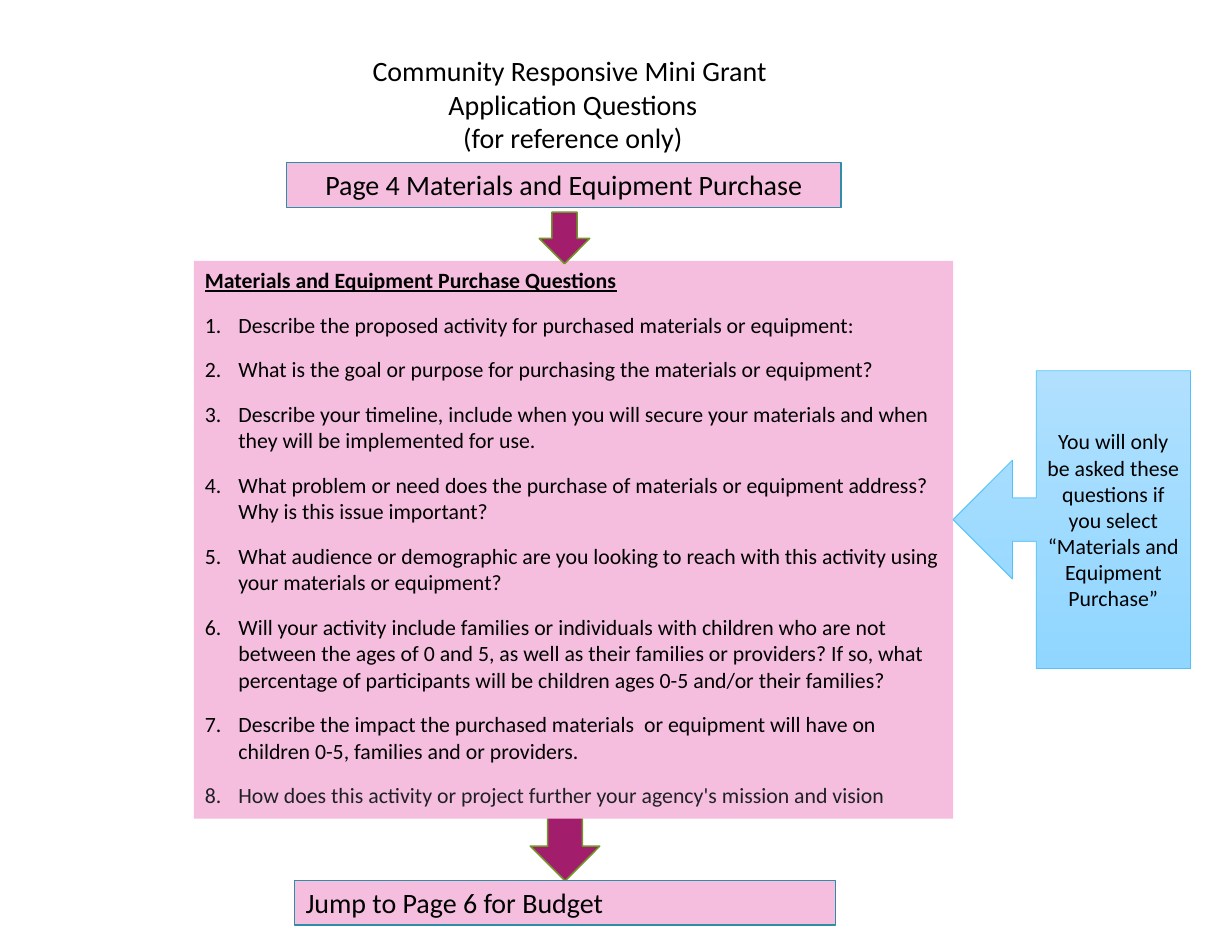
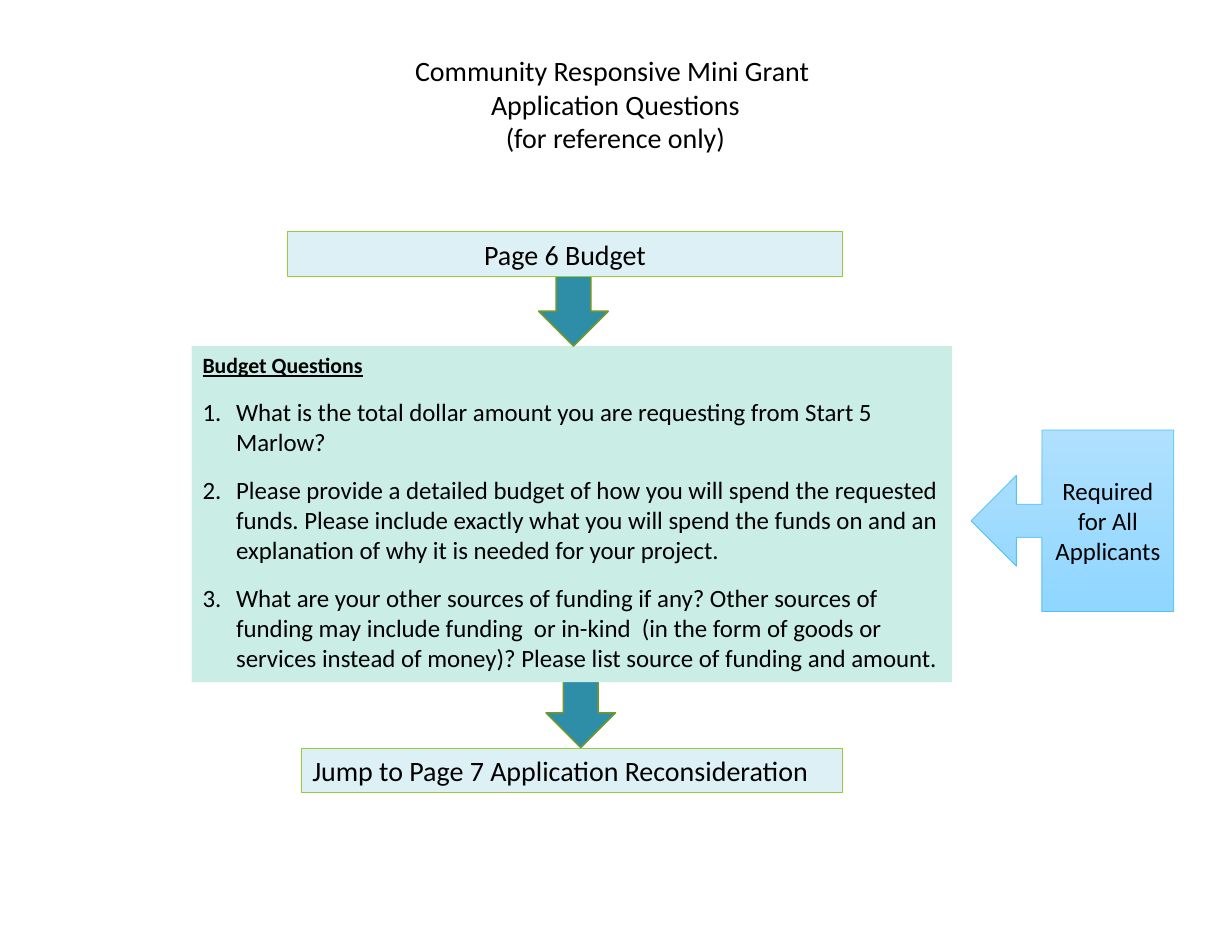
import lxml.etree
import pptx
import pptx.dml.color
import pptx.enum.shapes
import pptx.enum.text
import pptx.oxml.ns
import pptx.util

Inches = pptx.util.Inches
Pt = pptx.util.Pt
RGBColor = pptx.dml.color.RGBColor
SHAPE = pptx.enum.shapes.MSO_SHAPE
ALIGN = pptx.enum.text.PP_ALIGN
ANCHOR = pptx.enum.text.MSO_ANCHOR
AUTO_SIZE = pptx.enum.text.MSO_AUTO_SIZE

FONT = "Calibri"
BLACK = RGBColor(0x00, 0x00, 0x00)
CHARCOAL = RGBColor(0x20, 0x21, 0x24)
PINK = RGBColor(0xF5, 0xBE, 0xDF)
MAGENTA = RGBColor(0xA3, 0x1D, 0x6D)
TEAL = RGBColor(0x2E, 0x8E, 0xA8)
MINT = RGBColor(0xCA, 0xEE, 0xE5)
ICE = RGBColor(0xDC, 0xF0, 0xF5)
LIME = RGBColor(0x99, 0xCB, 0x38)
OLIVE = RGBColor(0x71, 0x96, 0x29)
SKY_TOP = RGBColor(0xB0, 0xE0, 0xFE)
SKY_BOTTOM = RGBColor(0x90, 0xD6, 0xFF)
SKY_LINE = RGBColor(0x51, 0xC3, 0xF9)

TITLE_LINES = ["Community Responsive Mini Grant ", "Application Questions", "(for reference only)"]
CALLOUT_ADJUSTMENTS = [0.182, 0.25, 0.25, 0.65]

MATERIALS_QUESTIONS = [
    "Describe the proposed activity for purchased materials or equipment:",
    "What is the goal or purpose for purchasing the materials or equipment?",
    "Describe your timeline, include when you will secure your materials and when "
    "they will be implemented for use.",
    "What problem or need does the purchase of materials or equipment address? "
    "Why is this issue important?",
    "What audience or demographic are you looking to reach with this activity using "
    "your materials or equipment?",
    "Will your activity include families or individuals with children who are not "
    "between the ages of 0 and 5, as well as their families or providers? If so, what "
    "percentage of participants will be children ages 0-5 and/or their families?",
    "Describe the impact the purchased materials  or equipment will have on "
    "children 0-5, families and or providers.",
    "How does this activity or project further your agency's mission and vision",
]
BUDGET_QUESTIONS = [
    "What is the total dollar amount you are requesting from Start 5 Marlow?",
    "Please provide a detailed budget of how you will spend the requested funds. "
    "Please include exactly what you will spend the funds on and an explanation of "
    "why it is needed for your project.",
    "What are your other sources of funding if any? Other sources of funding may "
    "include funding  or in-kind  (in the form of goods or services instead of money)? "
    "Please list source of funding and amount.",
]


class FlowDeck:
    def __init__(self):
        self.prs = pptx.Presentation()
        self.prs.slide_width = Inches(11)
        self.prs.slide_height = Inches(8.5)
        self.s = None

    def new_slide(self, box_fill, box_line, panel_fill, arrow_fill):
        self.s = self.prs.slides.add_slide(self.prs.slide_layouts[5])
        self.box_fill, self.box_line = box_fill, box_line
        self.panel_fill, self.arrow_fill = panel_fill, arrow_fill

    def shape(self, kind, left, top, width, height, fill=None, line=None, weight=0.75):
        sp = self.s.shapes.add_shape(kind, Inches(left), Inches(top), Inches(width), Inches(height))
        sp.shadow.inherit = False
        if fill is not None:
            sp.fill.solid()
            sp.fill.fore_color.rgb = fill
        if line is None:
            sp.line.fill.background()
        else:
            sp.line.color.rgb = line
            sp.line.width = Pt(weight)
        return sp

    def frame(self, sp, anchor=ANCHOR.TOP, auto_size=AUTO_SIZE.SHAPE_TO_FIT_TEXT):
        tf = sp.text_frame
        tf.word_wrap = True
        tf.auto_size = auto_size
        tf.vertical_anchor = anchor
        return tf

    def paragraph(self, tf, text, size, align=ALIGN.LEFT, space=0, color=BLACK, heading=False):
        p = tf.paragraphs[0] if not tf.paragraphs[0].runs else tf.add_paragraph()
        p.alignment = align
        p.space_before = p.space_after = Pt(space)
        r = p.add_run()
        r.text = text
        r.font.name = FONT
        r.font.size = Pt(size)
        r.font.color.rgb = color
        r.font.bold = r.font.underline = heading
        return p

    def title(self, left):
        sp = self.s.shapes.title
        sp.left, sp.top = Inches(left), Inches(0.43)
        sp.width, sp.height = Inches(4.95), Inches(1.01)
        tf = self.frame(sp)
        for text in TITLE_LINES:
            self.paragraph(tf, text, 18, ALIGN.CENTER)

    def page_box(self, text, left, top, width=4.95, align=ALIGN.CENTER):
        sp = self.shape(SHAPE.RECTANGLE, left, top, width, 0.4, self.box_fill, self.box_line)
        self.paragraph(self.frame(sp), text, 18, align, 6)

    def jump_box(self, text, left, top):
        self.page_box(text, left, top, 4.83, ALIGN.LEFT)

    def down_arrow(self, left, top, length, thickness):
        sp = self.shape(SHAPE.RIGHT_ARROW, left, top, length, thickness, self.arrow_fill, OLIVE, 1)
        sp.rotation = 90

    def question_panel(self, heading, questions, size, left, top, width, height, last_color=BLACK):
        sp = self.shape(SHAPE.RECTANGLE, left, top, width, height, self.panel_fill)
        tf = self.frame(sp)
        self.paragraph(tf, heading, 14, space=6, heading=True)
        for question in questions:
            color = last_color if question == questions[-1] else BLACK
            self.number(self.paragraph(tf, question, size, space=6, color=color))

    def number(self, p):
        pPr = p._p.get_or_add_pPr()
        pPr.set("marL", str(Inches(0.3)))
        pPr.set("indent", str(-Inches(0.3)))
        lxml.etree.SubElement(pPr, pptx.oxml.ns.qn("a:buAutoNum"), type="arabicPeriod")

    def callout(self, text, size, left, top, width, height):
        sp = self.shape(SHAPE.LEFT_ARROW_CALLOUT, left, top, width, height, line=SKY_LINE, weight=0.5)
        for i, value in enumerate(CALLOUT_ADJUSTMENTS):
            sp.adjustments[i] = value
        sp.fill.gradient()
        sp.fill.gradient_angle = 270
        for stop, color in zip(sp.fill.gradient_stops, (SKY_TOP, SKY_BOTTOM)):
            stop.color.rgb = color
        tf = self.frame(sp, ANCHOR.MIDDLE, AUTO_SIZE.NONE)
        self.paragraph(tf, text, size, ALIGN.CENTER)


def materials_slide(deck):
    deck.new_slide(PINK, TEAL, PINK, MAGENTA)
    deck.title(2.64)
    deck.down_arrow(4.42, 6.93, 1.25, 0.62)
    deck.question_panel("Materials and Equipment Purchase Questions", MATERIALS_QUESTIONS, 14,
                        1.73, 2.33, 6.78, 4.98, CHARCOAL)
    deck.down_arrow(4.81, 1.9, 0.46, 0.45)
    deck.page_box("Page 4 Materials and Equipment Purchase", 2.56, 1.45)
    deck.callout("You will only be asked these questions if you select “Materials and Equipment Purchase”",
                 14, 8.51, 3.31, 2.12, 2.66)
    deck.jump_box("Jump to Page 6 for Budget", 2.63, 7.86)


def budget_slide(deck):
    deck.new_slide(ICE, LIME, MINT, TEAL)
    deck.title(3.02)
    deck.down_arrow(4.56, 5.74, 1.25, 0.62)
    deck.question_panel("Budget Questions", BUDGET_QUESTIONS, 16, 1.71, 3.09, 6.79, 3)
    deck.down_arrow(4.79, 2.45, 0.66, 0.62)
    deck.page_box("Page 6 Budget", 2.57, 2.07)
    deck.jump_box("Jump to Page 7 Application Reconsideration", 2.69, 6.68)
    deck.callout("Required for All Applicants", 16, 8.67, 3.84, 1.81, 1.62)


def main():
    deck = FlowDeck()
    materials_slide(deck)
    budget_slide(deck)
    deck.prs.save("out.pptx")


if __name__ == "__main__":
    main()
